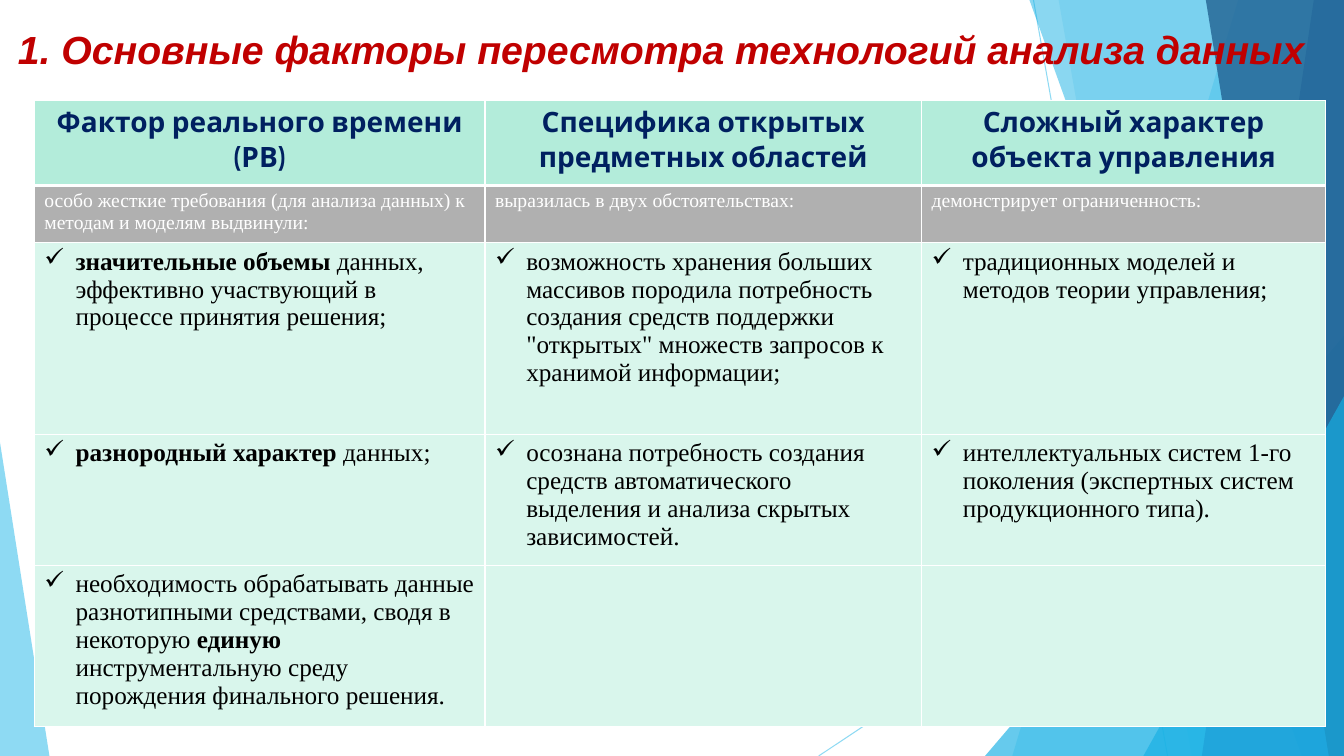
from dataclasses import dataclass

from lxml.etree import SubElement
from pptx import Presentation
from pptx.dml.color import RGBColor
from pptx.enum.shapes import MSO_CONNECTOR, MSO_SHAPE
from pptx.enum.text import PP_ALIGN
from pptx.oxml import parse_xml
from pptx.oxml.ns import nsdecls, qn
from pptx.util import Inches, Pt

SKY = RGBColor(0x5F, 0xCB, 0xEF)
AZURE = RGBColor(0x17, 0xB0, 0xE4)
BLUE = RGBColor(0x2E, 0x83, 0xC3)
DEEP_BLUE = RGBColor(0x22, 0x62, 0x92)
RED = RGBColor(0xC0, 0x00, 0x00)
NAVY = RGBColor(0x00, 0x20, 0x60)
WHITE = RGBColor(0xFF, 0xFF, 0xFF)
BLACK = RGBColor(0x00, 0x00, 0x00)
MINT = RGBColor(0xB3, 0xEC, 0xDA)
PALE_MINT = RGBColor(0xD9, 0xF6, 0xEC)
GRAY = RGBColor(0xB0, 0xB0, 0xB0)

PAGE_WIDTH, PAGE_HEIGHT = 13.33, 7.5


@dataclass(frozen=True)
class Ray:
    start: tuple[float, float]
    end: tuple[float, float]


@dataclass(frozen=True)
class Band:
    """A facet from its slanted left edge to the right edge of the page."""
    top_x: float
    bottom_x: float
    color: RGBColor
    opacity: int


@dataclass(frozen=True)
class Corner:
    """A triangle standing on the bottom edge of the page."""
    left: float
    top: float
    width: float
    apex: float
    color: RGBColor
    opacity: int


@dataclass(frozen=True)
class RowStyle:
    font: str
    size: int
    color: RGBColor
    fill: RGBColor
    bold: bool = False
    align: PP_ALIGN = PP_ALIGN.LEFT
    bullet: bool = False
    top_border: int = 1
    bottom_border: int = 1


@dataclass(frozen=True)
class Row:
    height: float
    style: RowStyle
    texts: tuple[str, ...]


RAYS = [Ray((10.25, 0), (11.58, 7.5)), Ray((13.33, 4.03), (8.12, 7.5))]
FACETS = [
    Band(12.28, 10.04, SKY, 36),
    Band(10.5, 11.82, SKY, 20),
    Corner(9.77, 3.33, 3.56, 1, AZURE, 66),
    Band(10.21, 12.91, AZURE, 50),
    Band(13.03, 11.92, BLUE, 70),
    Band(11.96, 13.18, DEEP_BLUE, 80),
    Corner(11.34, 3.93, 1.99, 1, AZURE, 66),
    Corner(0, 4.39, 0.49, 0, SKY, 70),
]

HEADER = RowStyle("Cabin", 20, NAVY, MINT, bold=True, align=PP_ALIGN.CENTER, bottom_border=3)
INTRO = RowStyle("Times New Roman", 14, WHITE, GRAY, top_border=3)
ITEM = RowStyle("Times New Roman", 18, BLACK, PALE_MINT, bullet=True)

# Double asterisks enclose bold words
COLUMN_WIDTHS = [4.47, 4.33, 4.01]
ROWS = [
    Row(0.84, HEADER, (
        "Фактор реального времени (РВ)",
        "Специфика открытых предметных областей",
        "Сложный характер объекта управления")),
    Row(0.56, INTRO, (
        "особо жесткие требования (для анализа данных) к методам и моделям выдвинули:",
        "выразилась в двух обстоятельствах:",
        "демонстрирует ограниченность:")),
    Row(1.9, ITEM, (
        "**значительные объемы** данных, эффективно участвующий в процессе принятия решения;",
        "возможность хранения больших массивов породила потребность создания средств "
        "поддержки \"открытых\" множеств запросов к хранимой информации;",
        "традиционных моделей и методов теории управления;")),
    Row(1.3, ITEM, (
        "**разнородный характер** данных;",
        "осознана потребность создания средств автоматического выделения и анализа "
        "скрытых зависимостей.",
        "интеллектуальных систем 1-го поколения (экспертных систем продукционного типа).")),
    Row(1.6, ITEM, (
        "необходимость обрабатывать данные разнотипными средствами, сводя в некоторую "
        "**единую** инструментальную среду порождения финального решения.", "", "")),
]


def set_opacity(fill_owner, percent: int) -> None:
    color = next(fill_owner.iter(qn("a:srgbClr")))
    SubElement(color, qn("a:alpha"), val=str(percent * 1000))


def draw_ray(page, ray: Ray) -> None:
    ends = [Inches(value) for value in ray.start + ray.end]
    line = page.shapes.add_connector(MSO_CONNECTOR.STRAIGHT, *ends)
    line.line.color.rgb = SKY
    line.line.width = Pt(0.75)
    properties = line._element.spPr
    set_opacity(properties, 70)
    SubElement(properties, qn("a:effectLst"))


def draw_facet(page, facet: Band | Corner) -> None:
    if isinstance(facet, Band):
        outline = page.shapes.build_freeform(Inches(facet.top_x), 0)
        outline.add_line_segments([
            (Inches(PAGE_WIDTH), 0),
            (Inches(PAGE_WIDTH), Inches(PAGE_HEIGHT)),
            (Inches(facet.bottom_x), Inches(PAGE_HEIGHT))])
        shape = outline.convert_to_shape()
    else:
        shape = page.shapes.add_shape(
            MSO_SHAPE.ISOSCELES_TRIANGLE, Inches(facet.left), Inches(facet.top),
            Inches(facet.width), Inches(PAGE_HEIGHT - facet.top))
        shape.adjustments[0] = facet.apex
    shape.shadow.inherit = False
    shape.line.fill.background()
    shape.fill.solid()
    shape.fill.fore_color.rgb = facet.color
    set_opacity(shape._element.spPr, facet.opacity)


def draw_title(page, text: str) -> None:
    box = page.shapes.add_textbox(Inches(0.08), Inches(0.2), Inches(13.26), Inches(0.57))
    box.text_frame.word_wrap = True
    para = box.text_frame.paragraphs[0]
    para.text = text
    font = para.font
    font.name, font.size, font.bold, font.italic = "Arial", Pt(28), True, True
    font.color.rgb = RED


def fill_cell(cell, text: str, style: RowStyle) -> None:
    # Borders and background
    properties = cell._tc.get_or_add_tcPr()
    borders = {"lnL": 1, "lnR": 1, "lnT": style.top_border, "lnB": style.bottom_border}
    for side, width in borders.items():
        properties.append(parse_xml(
            f'<a:{side} {nsdecls("a")} w="{Pt(width)}"><a:solidFill>'
            f'<a:srgbClr val="{WHITE}"/></a:solidFill></a:{side}>'))
    cell.fill.solid()
    cell.fill.fore_color.rgb = style.fill
    if not text:
        return

    # Text
    para = cell.text_frame.paragraphs[0]
    para.alignment = style.align
    if style.bullet:
        settings = para._p.get_or_add_pPr()
        settings.set("marL", str(Inches(0.31)))
        settings.set("indent", str(-Inches(0.31)))
        SubElement(settings, qn("a:buChar"), char="✓")
    para.font.name, para.font.size = style.font, Pt(style.size)
    para.font.color.rgb = style.color
    para.font.bold = style.bold
    for index, part in enumerate(text.split("**")):
        if part:
            span = para.add_run()
            span.text = part
            if index % 2:
                span.font.bold = True


def draw_table(page) -> None:
    frame = page.shapes.add_table(
        len(ROWS), len(COLUMN_WIDTHS), Inches(0.34), Inches(1),
        Inches(sum(COLUMN_WIDTHS)), Inches(sum(row.height for row in ROWS)))
    table = frame.table
    table.first_row = table.horz_banding = False
    for column, width in zip(table.columns, COLUMN_WIDTHS):
        column.width = Inches(width)
    for line, row in zip(table.rows, ROWS):
        line.height = Inches(row.height)
        for cell, text in zip(line.cells, row.texts):
            fill_cell(cell, text, row.style)


def main() -> None:
    deck = Presentation()
    deck.slide_width, deck.slide_height = Inches(PAGE_WIDTH), Inches(PAGE_HEIGHT)
    page = deck.slides.add_slide(deck.slide_layouts[6])
    for ray in RAYS:
        draw_ray(page, ray)
    for facet in FACETS:
        draw_facet(page, facet)
    draw_title(page, "1. Основные факторы пересмотра технологий анализа данных")
    draw_table(page)
    deck.save("out.pptx")


if __name__ == "__main__":
    main()
